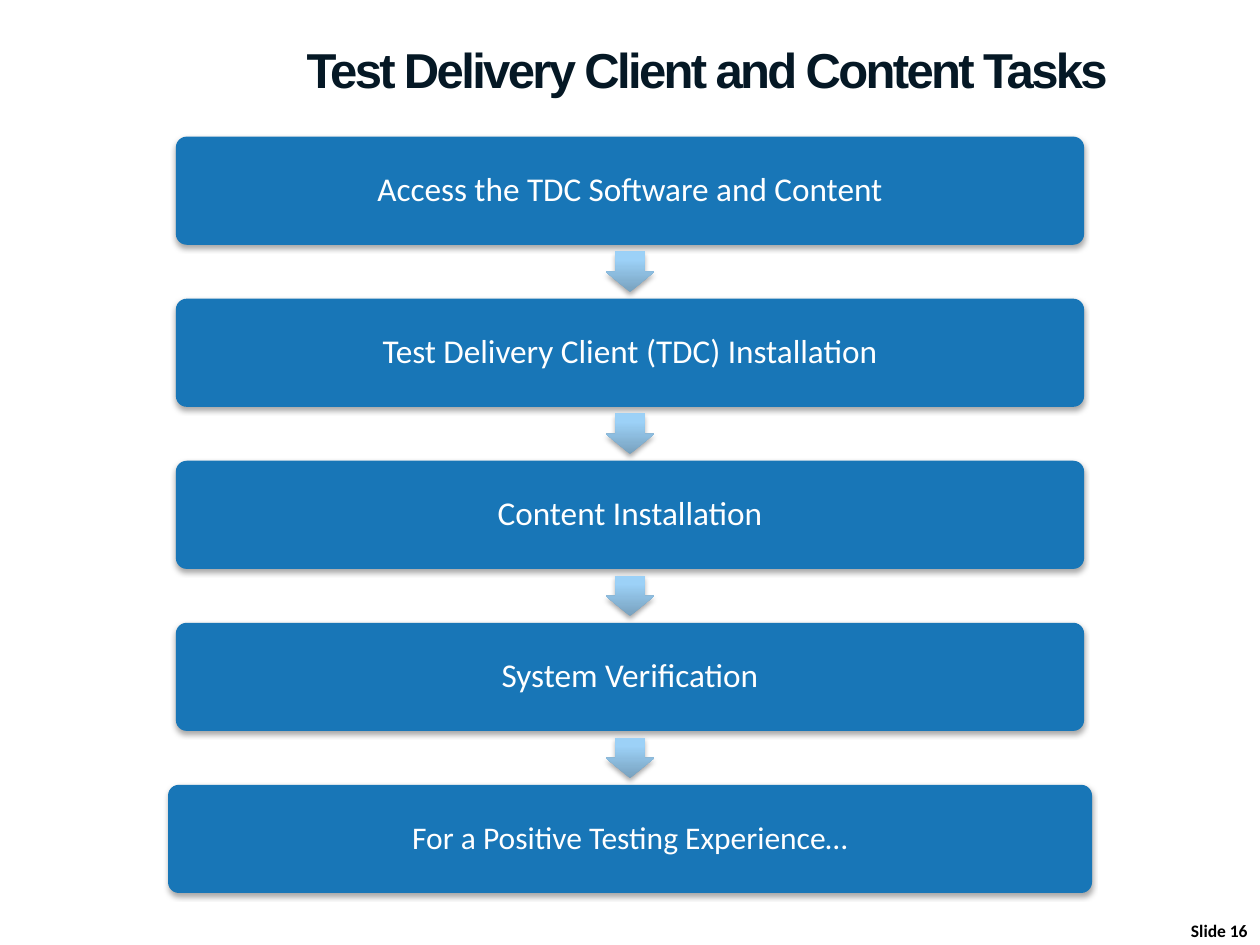
"""Build the slide of Test Delivery Client tasks as a downward flow of steps."""
from copy import deepcopy
from dataclasses import dataclass

from lxml.etree import SubElement
from pptx import Presentation
from pptx.dml.color import RGBColor
from pptx.enum.shapes import MSO_SHAPE
from pptx.enum.text import MSO_ANCHOR, MSO_AUTO_SIZE, PP_ALIGN
from pptx.oxml.ns import qn
from pptx.util import Pt

COLORS = {
    "step": "1876B7",
    "step_text": "FFFFFF",
    "arrow_dark": "78A1BE",
    "arrow_mid": "9CD1F7",
    "arrow_light": "9BD2FA",
    "title": "051825",
    "number": "000000",
    "shadow": "000000",
}
CENTER = 360
FIRST_TOP = 78.1
PITCH = 92.6
STEP_HEIGHT = 61.8
ARROW_WIDTH, ARROW_HEIGHT = 27.8, 23.2


@dataclass
class Step:
    text: str
    width: float = 519
    size: float = 19
    inset: float = 5.7


STEPS = [
    Step("Access the TDC Software and Content"),
    Step("Test Delivery Client (TDC) Installation"),
    Step("Content Installation"),
    Step("System Verification"),
    Step("For a Positive Testing Experience…", width=528, size=18, inset=5.4),
]


def color(name: str) -> RGBColor:
    return RGBColor.from_string(COLORS[name])


def write(box, text: str, *, size: float, ink: str, font: str = "Calibri",
          bold: bool = False, align=PP_ALIGN.LEFT, anchor=MSO_ANCHOR.TOP,
          line_spacing: float = 1.0, tracking: float = 0) -> None:
    frame = box.text_frame
    frame.word_wrap = True
    frame.auto_size = MSO_AUTO_SIZE.NONE
    frame.vertical_anchor = anchor
    para = frame.paragraphs[0]
    para.alignment = align
    para.line_spacing = line_spacing
    span = para.add_run()
    span.text = text
    span.font.name = font
    span.font.size = Pt(size)
    span.font.bold = bold
    span.font.color.rgb = color(ink)
    if tracking:
        span.font._element.set("spc", str(round(tracking * 100)))


def add_shadow(shape) -> None:
    shape.shadow.inherit = False
    effects = shape._element.spPr.find(qn("a:effectLst"))
    shadow = SubElement(effects, qn("a:outerShdw"), blurRad=str(Pt(3.1)),
                        dist=str(Pt(1.8)), dir="5400000", rotWithShape="0")
    shade = SubElement(shadow, qn("a:srgbClr"), val=COLORS["shadow"])
    SubElement(shade, qn("a:alpha"), val="35000")


def add_centered(page, kind, top: float, width: float, height: float):
    shape = page.shapes.add_shape(kind, Pt(CENTER - width / 2), Pt(top),
                                  Pt(width), Pt(height))
    shape.line.fill.background()
    return shape


def add_step(page, step: Step, top: float) -> None:
    box = add_centered(page, MSO_SHAPE.ROUNDED_RECTANGLE, top, step.width, STEP_HEIGHT)
    box.adjustments[0] = 0.1
    box.fill.solid()
    box.fill.fore_color.rgb = color("step")
    add_shadow(box)
    frame = box.text_frame
    frame.margin_left = frame.margin_right = Pt(step.inset)
    frame.margin_top = frame.margin_bottom = Pt(step.inset)
    write(box, step.text, size=step.size, ink="step_text", align=PP_ALIGN.CENTER,
          anchor=MSO_ANCHOR.MIDDLE, line_spacing=0.9)


def add_arrow(page, top: float) -> None:
    arrow = add_centered(page, MSO_SHAPE.DOWN_ARROW, top, ARROW_WIDTH, ARROW_HEIGHT)
    arrow.adjustments[0] = 0.6
    arrow.adjustments[1] = 0.5
    arrow.fill.gradient()
    arrow.fill.gradient_angle = 90
    stops = arrow._element.spPr.find(qn("a:gradFill")).find(qn("a:gsLst"))
    stops.append(deepcopy(stops[-1]))
    shades = [(0, "arrow_dark"), (0.8, "arrow_mid"), (1, "arrow_light")]
    for stop, (position, shade) in zip(arrow.fill.gradient_stops, shades):
        stop.position = position
        stop.color.rgb = color(shade)
    add_shadow(arrow)


def main() -> None:
    deck = Presentation()
    deck.slide_width, deck.slide_height = Pt(720), Pt(540)
    page = deck.slides.add_slide(deck.slide_layouts[5])

    title = page.shapes.title
    title.left, title.top, title.width, title.height = Pt(168), Pt(0), Pt(552), Pt(60)
    write(title, "Test Delivery Client and Content Tasks", size=28, ink="title",
          font="Arial", bold=True, anchor=MSO_ANCHOR.BOTTOM, tracking=-1.5)

    for index, step in enumerate(STEPS):
        top = FIRST_TOP + index * PITCH
        if index:
            gap = PITCH - STEP_HEIGHT
            add_arrow(page, top - (gap + ARROW_HEIGHT) / 2)
        add_step(page, step, top)

    number = page.shapes.add_textbox(Pt(648), Pt(522), Pt(72), Pt(18))
    write(number, "Slide 16", size=10, ink="number", bold=True, align=PP_ALIGN.RIGHT)

    deck.save("out.pptx")


if __name__ == "__main__":
    main()
